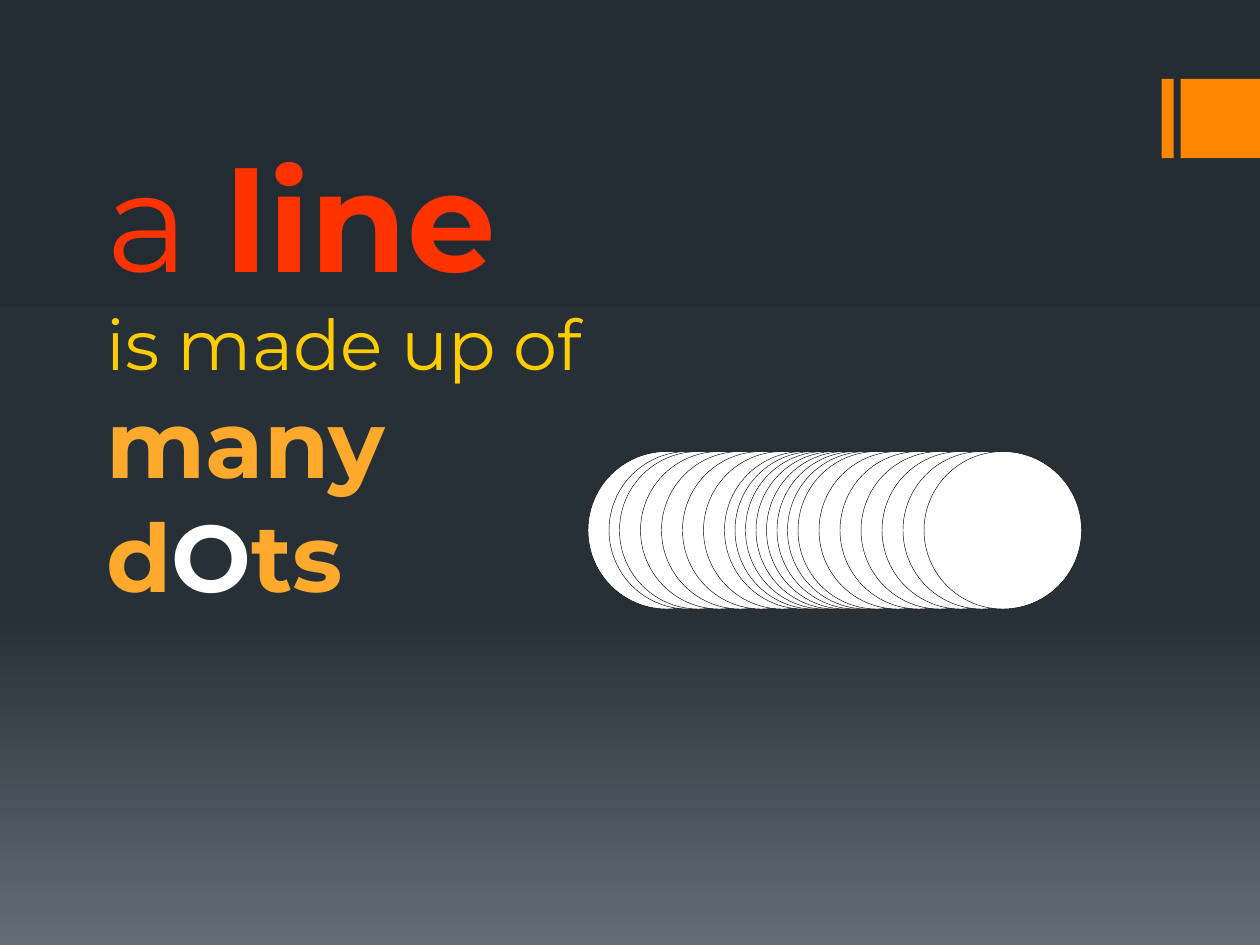
from copy import deepcopy
from itertools import accumulate

from pptx import Presentation
from pptx.dml.color import RGBColor
from pptx.enum.shapes import MSO_SHAPE
from pptx.enum.text import MSO_ANCHOR
from pptx.util import Cm, Pt

WHITE = RGBColor(0xFF, 0xFF, 0xFF)
BLACK = RGBColor(0x00, 0x00, 0x00)
ORANGE = RGBColor(0xFF, 0x86, 0x00)
AMBER = RGBColor(0xFF, 0xAA, 0x2D)
RED = RGBColor(0xFF, 0x33, 0x00)
YELLOW = RGBColor(0xFF, 0xCC, 0x00)
NIGHT = RGBColor(0x24, 0x2C, 0x33)
SLATE = RGBColor(0x27, 0x30, 0x37)
MIST = RGBColor(0x63, 0x6D, 0x76)


class SlidePainter:
    font_name = "Montserrat"

    def __init__(self, page):
        self.page = page

    def background(self, stops):
        fill = self.page.background.fill
        fill.gradient()
        fill.gradient_angle = 270
        stop_list = self.page.element.xpath(".//p:bg//a:gsLst")[0]
        while len(stop_list) < len(stops):
            stop_list.insert(1, deepcopy(stop_list[0]))
        for stop, (position, color) in zip(fill.gradient_stops, stops):
            stop.position = position
            stop.color.rgb = color

    def shape(self, kind, left, top, width, height, color, outline=None):
        shape = self.page.shapes.add_shape(
            kind, Cm(left), Cm(top), Cm(width), Cm(height))
        shape.shadow.inherit = False
        shape.fill.solid()
        shape.fill.fore_color.rgb = color
        if outline is None:
            shape.line.fill.background()
        else:
            shape.line.color.rgb = outline
            shape.line.width = Pt(0.25)

    def text(self, left, top, width, height, lines):
        """Each line is a list of (words, size, color, bold) runs."""
        box = self.page.shapes.add_textbox(
            Cm(left), Cm(top), Cm(width), Cm(height))
        frame = box.text_frame
        frame.word_wrap = True
        frame.vertical_anchor = MSO_ANCHOR.TOP
        for number, runs in enumerate(lines):
            para = frame.add_paragraph() if number else frame.paragraphs[0]
            for words, size, color, bold in runs:
                span = para.add_run()
                span.text = words
                span.font.name = self.font_name
                span.font.size = Pt(size)
                span.font.bold = bold
                span.font.color.rgb = color


def main():
    deck = Presentation()
    deck.slide_width, deck.slide_height = Cm(25.4), Cm(19.05)
    page = deck.slides.add_slide(deck.slide_layouts[6])
    painter = SlidePainter(page)
    painter.background([(0, NIGHT), (0.65, SLATE), (1, MIST)])

    # Corner accent: a narrow bar and a square at the right edge
    for left, width in ((23.42, 0.24), (23.8, 1.6)):
        painter.shape(MSO_SHAPE.RECTANGLE, left, 1.59, width, 1.6, ORANGE)

    # Row of dots merging into a line, placed on a grid of 1/12 inch
    grid = 2.54 / 12
    steps = [2, 1] + [2] * 5 + [1] * 7 + [2] * 6
    for column in accumulate(steps, initial=56):
        painter.shape(MSO_SHAPE.OVAL, column * grid, 43 * grid,
                      15 * grid, 15 * grid, WHITE, BLACK)

    # Statement
    painter.text(1.9, 7.62, 6.8, 4.88, [
        [("many", 54, AMBER, True)],
        [("d", 54, AMBER, True), ("O", 54, WHITE, True),
         ("ts", 54, AMBER, True)],
    ])
    painter.text(1.9, 2.54, 11.23, 5.33, [
        [("a ", 80, RED, False), ("line", 80, RED, True)],
        [("is made up of", 40, YELLOW, False)],
    ])

    deck.save("out.pptx")


if __name__ == "__main__":
    main()
